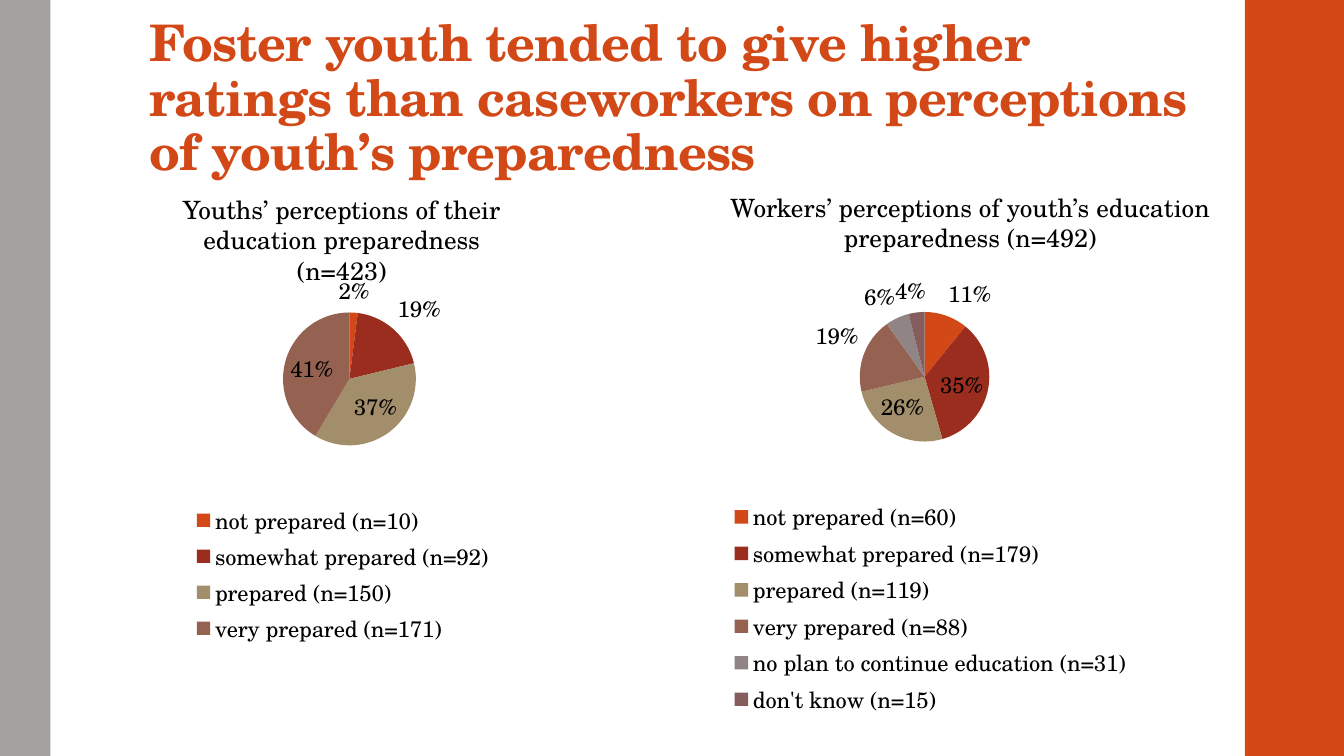
import pptx
import pptx.util
import pptx.chart.data
import pptx.dml.color
import pptx.enum.chart
import pptx.enum.shapes
import pptx.enum.text
import pptx.oxml
import pptx.oxml.ns

Pt = pptx.util.Pt
FONT = "TeX Gyre Schola"
HEX = {"orange": "D34817", "red": "9B2D1F", "tan": "A28E6A", "brown": "956251",
       "gray": "918485", "plum": "855D5D", "stone": "A6A1A1", "black": "000000"}
SLICES = ["orange", "red", "tan", "brown", "gray", "plum"]
TITLE = ("Foster youth tended to give higher ratings than caseworkers "
         "on perceptions of youth’s preparedness")
BANDS = [("orange", 889.2, 72), ("stone", 0, 36)]
PIES = [
    {"head": "Youths’ perceptions of their education preparedness (n=423)",
     "head_at": (105.84, 135.36, 276.48, 51.12),
     "at": (51.12, 185.76, 387.36, 277.2),
     "plot": (0.39, 0.134, 0.245, 0.345),
     "key": (0.22, 0.62, 0.56, 0.38),
     "data": [("not prepared (n=10)", 0.02), ("somewhat prepared (n=92)", 0.19),
              ("prepared (n=150)", 0.37), ("very prepared (n=171)", 0.41)]},
    {"head": "Workers’ perceptions of youth’s education preparedness (n=492)",
     "head_at": (505.44, 133.92, 375.12, 51.12),
     "at": (480.96, 185.76, 360, 328.32),
     "plot": (0.37, 0.113, 0.257, 0.282),
     "key": (0.1, 0.515, 0.82, 0.485),
     "data": [("not prepared (n=60)", 0.11), ("somewhat prepared (n=179)", 0.35),
              ("prepared (n=119)", 0.26), ("very prepared (n=88)", 0.19),
              ("no plan to continue education (n=31)", 0.06),
              ("don't know (n=15)", 0.04)]},
]


def color(name):
    return pptx.dml.color.RGBColor.from_string(HEX[name])


def points(box):
    return [Pt(n) for n in box]


def style(font, size, name="black", bold=False):
    font.name, font.size, font.bold = FONT, Pt(size), bold
    font.color.rgb = color(name)


def fill(form, name):
    form.fill.solid()
    form.fill.fore_color.rgb = color(name)
    form.line.fill.background()


def layout(box, inner):
    target = '<c:layoutTarget val="inner"/>' if inner else ""
    modes = "".join(f'<c:{k}Mode val="edge"/>' for k in "xy")
    sizes = "".join(f'<c:{k} val="{n}"/>' for k, n in zip("xywh", box))
    return pptx.oxml.parse_xml(
        f'<c:layout {pptx.oxml.ns.nsdecls("c")}><c:manualLayout>'
        f'{target}{modes}{sizes}</c:manualLayout></c:layout>')


def place(part, box, index, inner=False):
    for old in part.findall(pptx.oxml.ns.qn("c:layout")):
        part.remove(old)
    part.insert(index, layout(box, inner))


def add_head(slide, pie):
    frame = slide.shapes.add_textbox(*points(pie["head_at"])).text_frame
    frame.word_wrap = True
    para = frame.paragraphs[0]
    para.text = pie["head"]
    para.alignment = pptx.enum.text.PP_ALIGN.CENTER
    style(para.font, 18)


def add_pie(slide, pie):
    data = pptx.chart.data.CategoryChartData(number_format="0%")
    data.categories = [name for name, share in pie["data"]]
    data.add_series("Series 1", [share for name, share in pie["data"]])
    chart = slide.shapes.add_chart(
        pptx.enum.chart.XL_CHART_TYPE.PIE, *points(pie["at"]), data).chart
    chart.has_title = False
    style(chart.font, 16)
    chart.plots[0].vary_by_categories = True
    series = chart.plots[0].series[0]
    for i in range(len(pie["data"])):
        fill(series.points[i].format, SLICES[i])
    labels = series.data_labels
    labels.show_value = True
    labels.number_format, labels.number_format_is_linked = "0%", False
    labels.position = pptx.enum.chart.XL_LABEL_POSITION.BEST_FIT
    chart.has_legend = True
    legend = chart.legend
    legend.position = pptx.enum.chart.XL_LEGEND_POSITION.BOTTOM
    legend.include_in_layout = False
    area = chart.element.find(".//" + pptx.oxml.ns.qn("c:plotArea"))
    place(area, pie["plot"], 0, True)
    place(chart.element.find(".//" + pptx.oxml.ns.qn("c:legend")), pie["key"], 1)


def add_title(slide):
    title = slide.shapes.title
    title.left, title.top, title.width, title.height = points((99.36, 23.04, 763.2, 110.16))
    frame = title.text_frame
    frame.word_wrap = True
    frame.auto_size = pptx.enum.text.MSO_AUTO_SIZE.NONE
    frame.vertical_anchor = pptx.enum.text.MSO_ANCHOR.BOTTOM
    frame.margin_left = frame.margin_right = Pt(7.2)
    frame.margin_top, frame.margin_bottom = Pt(2.16), Pt(3.6)
    para = frame.paragraphs[0]
    para.text = TITLE
    para.alignment = pptx.enum.text.PP_ALIGN.LEFT
    para.line_spacing = 0.9
    style(para.font, 36, "orange", True)
    para.runs[0].font._element.set("spc", "-50")


def main():
    deck = pptx.Presentation()
    deck.slide_width, deck.slide_height = Pt(960), Pt(540)
    slide = deck.slides.add_slide(deck.slide_layouts[5])
    for name, left, width in BANDS:
        band = slide.shapes.add_shape(
            pptx.enum.shapes.MSO_SHAPE.RECTANGLE, *points((left, 0, width, 540)))
        band.shadow.inherit = False
        fill(band, name)
    add_title(slide)
    for pie in PIES:
        add_head(slide, pie)
        add_pie(slide, pie)
    deck.save("out.pptx")


if __name__ == "__main__":
    main()
